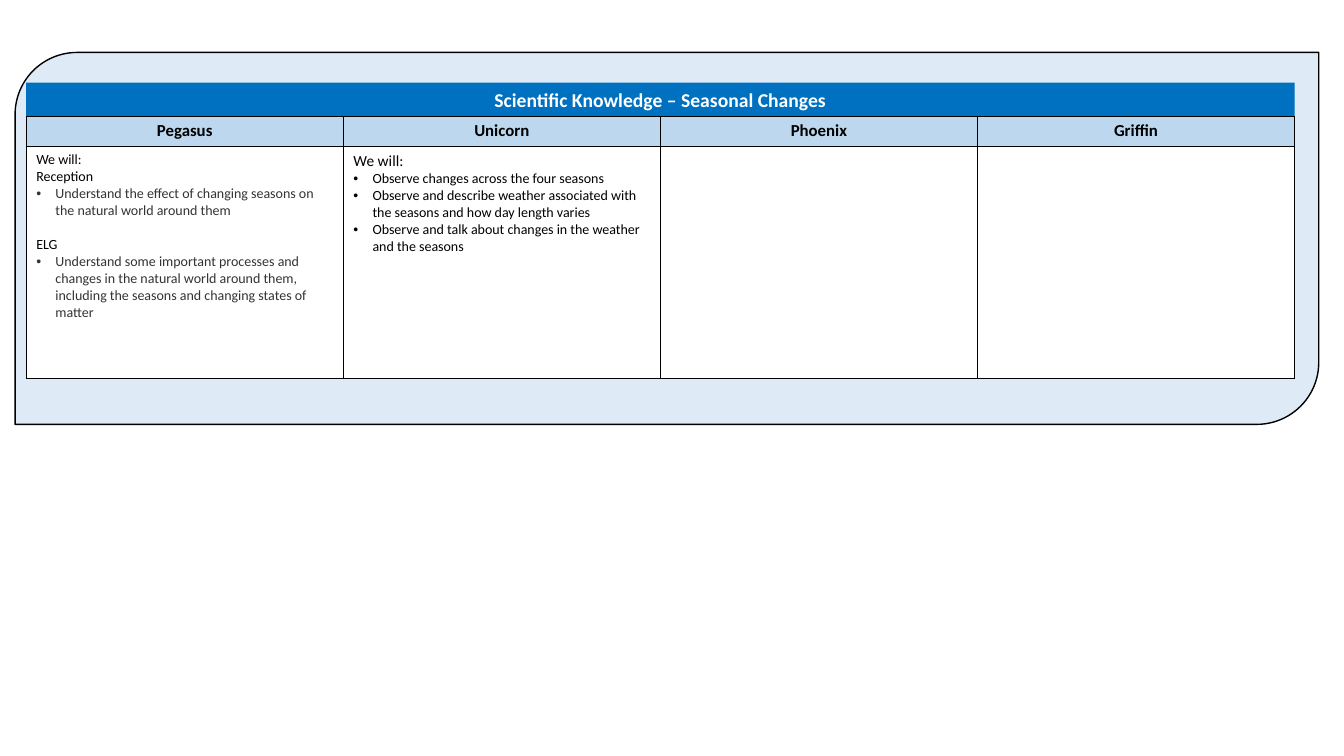
from lxml import etree
from pptx import Presentation
from pptx import util as u
from pptx.dml.color import RGBColor
from pptx.enum import shapes, text
from pptx.oxml import ns

COLOURS = {
    "panel": "DEEBF7", "banner": "0070C0", "heading": "BDD7EE",
    "white": "FFFFFF", "black": "000000", "grey": "333333",
}
FONT = "Calibri"
WIDTH, HEIGHT = u.Inches(13.33), u.Inches(7.5)
LEFT, GRID_WIDTH = u.Inches(0.26), u.Inches(12.58)
BANNER_TOP, HEADING_TOP, BODY_TOP = u.Inches(0.82), u.Inches(1.15), u.Inches(1.45)
BODY_HEIGHT = u.Inches(2.3)
INDENT = u.Inches(0.19)

CLASSES = ["Pegasus", "Unicorn", "Phoenix", "Griffin"]
KNOWLEDGE = [
    [
        {"words": "We will:"},
        {"words": "Reception"},
        {"words": "Understand the effect of changing seasons on the natural world around them",
         "bullet": True, "colour": "grey"},
        {"words": "ELG", "before": 12},
        {"words": "Understand some important processes and changes in the natural world around them, "
                  "including the seasons and changing states of matter",
         "bullet": True, "colour": "grey"},
    ],
    [
        {"words": "We will:", "size": 11},
        {"words": "Observe changes across the four seasons", "bullet": True},
        {"words": "Observe and describe weather associated with the seasons and how day length varies",
         "bullet": True},
        {"words": "Observe and talk about changes in the weather and the seasons", "bullet": True},
    ],
    [],
    [],
]


def colour_of(name):
    return RGBColor.from_string(COLOURS[name])


def paint(fill, name):
    fill.solid()
    fill.fore_color.rgb = colour_of(name)


def write(para, words, size=10, colour="black", bold=False, centred=False, bullet=False, before=0):
    para.alignment = text.PP_ALIGN.CENTER if centred else text.PP_ALIGN.LEFT
    para.space_before = u.Pt(before)
    if bullet:
        properties = para._p.get_or_add_pPr()
        properties.set("marL", str(INDENT))
        properties.set("indent", str(-INDENT))
        etree.SubElement(properties, ns.qn("a:buFont"), typeface="Arial")
        etree.SubElement(properties, ns.qn("a:buChar"), char="•")
    span = para.add_run()
    span.text = words
    span.font.name = FONT
    span.font.size = u.Pt(size)
    span.font.bold = bold
    span.font.color.rgb = colour_of(colour)


def add_panel(page):
    panel = page.shapes.add_shape(
        shapes.MSO_SHAPE.ROUND_2_DIAG_RECTANGLE,
        u.Inches(0.15), u.Inches(0.52), u.Inches(12.93), u.Inches(3.69))
    panel.shadow.inherit = False
    paint(panel.fill, "panel")
    panel.line.color.rgb = colour_of("black")
    panel.line.width = u.Pt(1)
    return panel


def add_banner(page, panel, words):
    banner = page.shapes.title
    banner.left, banner.top = LEFT, BANNER_TOP
    banner.width, banner.height = GRID_WIDTH, u.Inches(0.34)
    paint(banner.fill, "banner")
    frame = banner.text_frame
    frame.word_wrap = True
    frame.auto_size = text.MSO_AUTO_SIZE.NONE
    frame.vertical_anchor = text.MSO_ANCHOR.MIDDLE
    write(frame.paragraphs[0], words, size=14, colour="white", bold=True, centred=True)
    panel.element.addnext(banner.element)


def border(cell):
    properties = cell._tc.get_or_add_tcPr()
    for position, side in enumerate(("a:lnL", "a:lnR", "a:lnT", "a:lnB")):
        line = etree.Element(ns.qn(side), w=str(u.Pt(0.5)))
        fill = etree.SubElement(line, ns.qn("a:solidFill"))
        etree.SubElement(fill, ns.qn("a:srgbClr"), val=COLOURS["black"])
        properties.insert(position, line)


def add_row(page, top, height, fill, columns):
    table = page.shapes.add_table(1, len(columns), LEFT, top, GRID_WIDTH, height).table
    table.first_row = table.horz_banding = False
    for cell, lines in zip(table.rows[0].cells, columns):
        paint(cell.fill, fill)
        border(cell)
        for number, line in enumerate(lines):
            frame = cell.text_frame
            para = frame.add_paragraph() if number else frame.paragraphs[0]
            write(para, **line)


def main():
    deck = Presentation()
    deck.slide_width, deck.slide_height = WIDTH, HEIGHT
    page = deck.slides.add_slide(deck.slide_layouts.get_by_name("Title Only"))
    panel = add_panel(page)
    add_banner(page, panel, "Scientific Knowledge – Seasonal Changes")
    headings = [[{"words": name, "size": 12, "bold": True, "centred": True}] for name in CLASSES]
    add_row(page, HEADING_TOP, BODY_TOP - HEADING_TOP, "heading", headings)
    add_row(page, BODY_TOP, BODY_HEIGHT, "white", KNOWLEDGE)
    deck.save("out.pptx")


if __name__ == "__main__":
    main()
